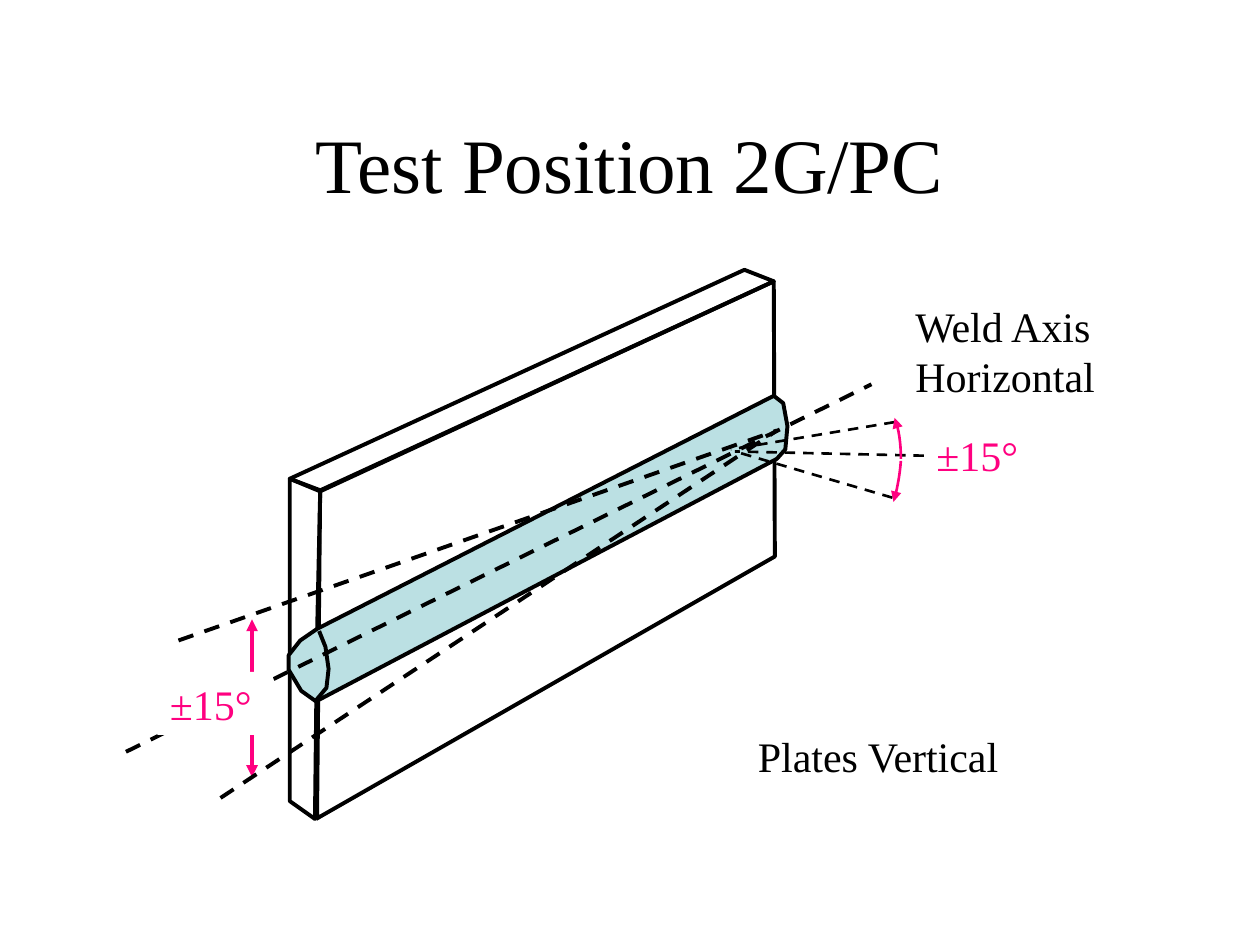
import pptx
import pptx.dml.color
import pptx.enum.dml
import pptx.enum.shapes
import pptx.enum.text
import pptx.oxml
import pptx.oxml.ns
import pptx.util

COLS, ROWS = 120, 90
CELL = pptx.util.Inches(10) / COLS
BLACK, PINK, WHITE, AQUA = "000000", "FF0080", "FFFFFF", "BBE0E3"

FACE = [(30.1, 78), (73.8, 53), (73.7, 26.8), (30.5, 46.7), (30.2, 77.9)]
SIDE = [(30, 78), (27.6, 76.3), (27.6, 45.6), (30.5, 46.7), (30.2, 60.6)]
TOP = [(27.6, 45.6), (70.9, 25.7), (73.7, 26.8), (30.5, 46.8)]
WELD = [(73.7, 37.7), (74.6, 38.4), (75, 40.6), (74.8, 42.8), (74, 43.7),
        (30.1, 66.8), (28.7, 65.8), (27.5, 63.8), (27.5, 62.4),
        (28.6, 61), (30.2, 59.9), (73.7, 37.7)]
RIM = [(30.4, 60.1), (31, 61.6), (31.3, 63.7), (31.1, 65.5), (30.1, 66.7)]
DOWN = [(85.8, 43.9), (85.7, 45.4), (85.4, 46.8), (85.1, 47.8)]
UP = [(85.8, 43.7), (85.8, 42.2), (85.6, 40.8), (85.2, 39.8)]


def grid(*cells):
    return [pptx.util.Emu(round(cell * CELL)) for cell in cells]


def paint(target, tint):
    if isinstance(target, pptx.dml.fill.FillFormat):
        target.solid()
        target = target.fore_color
    target.rgb = pptx.dml.color.RGBColor.from_string(tint)


def stroke(shape, tint, width, dash=False, ends=()):
    paint(shape.line.fill, tint)
    shape.line.width = pptx.util.Pt(width)
    if dash:
        shape.line.dash_style = pptx.enum.dml.MSO_LINE.DASH
    line = shape.line._get_or_add_ln()
    for end in ends:
        tip = pptx.oxml.ns.qn(f"a:{end}End")
        line.append(line.makeelement(tip, {"type": "triangle"}))


def rule(slide, start, stop, tint=BLACK, width=2.25, dash=True, ends=()):
    kind = pptx.enum.shapes.MSO_CONNECTOR.STRAIGHT
    shape = slide.shapes.add_connector(kind, *grid(*start, *stop))
    stroke(shape, tint, width, dash, ends)
    props = shape._element.spPr
    props.append(props.makeelement(pptx.oxml.ns.qn("a:effectLst"), {}))


def path(slide, points, close=False, fill=None, tint=BLACK, width=2.25, ends=()):
    first, *rest = [grid(*point) for point in points]
    build = slide.shapes.build_freeform(*first)
    build.add_line_segments(rest, close=close)
    shape = build.convert_to_shape()
    shape.shadow.inherit = False
    if fill:
        paint(shape.fill, fill)
    else:
        shape.fill.background()
    stroke(shape, tint, width, ends=ends)


def curve(slide, knots, steps=8):
    points = []
    for step in range(steps + 1):
        t = step / steps
        u = 1 - t
        parts = (u ** 3, 3 * u * u * t, 3 * u * t * t, t ** 3)
        points.append([sum(p * k for p, k in zip(parts, axis))
                       for axis in zip(*knots)])
    path(slide, points, tint=PINK, width=1.5, ends=["tail"])


def label(slide, words, box, tint=BLACK, size=24, fill=None, title=False):
    shape = slide.shapes.add_textbox(*grid(*box))
    if fill:
        paint(shape.fill, fill)
    frame = shape.text_frame
    frame.word_wrap = True
    frame.text = words
    para = frame.paragraphs[0]
    if title:
        frame.vertical_anchor = pptx.enum.text.MSO_ANCHOR.MIDDLE
        para.alignment = pptx.enum.text.PP_ALIGN.CENTER
    para.font.name = "Times New Roman"
    para.font.size = pptx.util.Pt(size)
    paint(para.font.color, tint)


def main():
    deck = pptx.Presentation()
    deck.slide_width, deck.slide_height = grid(COLS, ROWS)
    slide = deck.slides.add_slide(deck.slide_layouts[6])

    label(slide, "Test Position 2G/PC", (9, 8, 102, 15), size=44, title=True)
    rule(slide, (24, 59), (24, 74), PINK, dash=False, ends=["head", "tail"])
    label(slide, "Plates Vertical", (71, 69, 41, 6))
    label(slide, "Weld Axis Horizontal", (86, 28, 24, 10.8))

    path(slide, FACE)
    path(slide, SIDE, close=True)
    path(slide, TOP, close=True)
    path(slide, WELD, fill=AQUA)
    path(slide, RIM)

    rule(slide, (12, 71.6), (83, 36.6))
    label(slide, "±15°", (15, 64, 11, 6), PINK, fill=WHITE)
    for start in [(21, 76), (17, 61)]:
        rule(slide, start, (74, 41))

    label(slide, "±15°", (88, 40.3, 11, 6), PINK)
    for start, stop in [((88, 43.4), (70, 43)), ((85.2, 40.2), (69.6, 42.8)),
                        ((85, 47.4), (70, 43))]:
        rule(slide, start, stop, width=1.5)
    for knots in (DOWN, UP):
        curve(slide, knots)

    deck.save("out.pptx")


if __name__ == "__main__":
    main()
